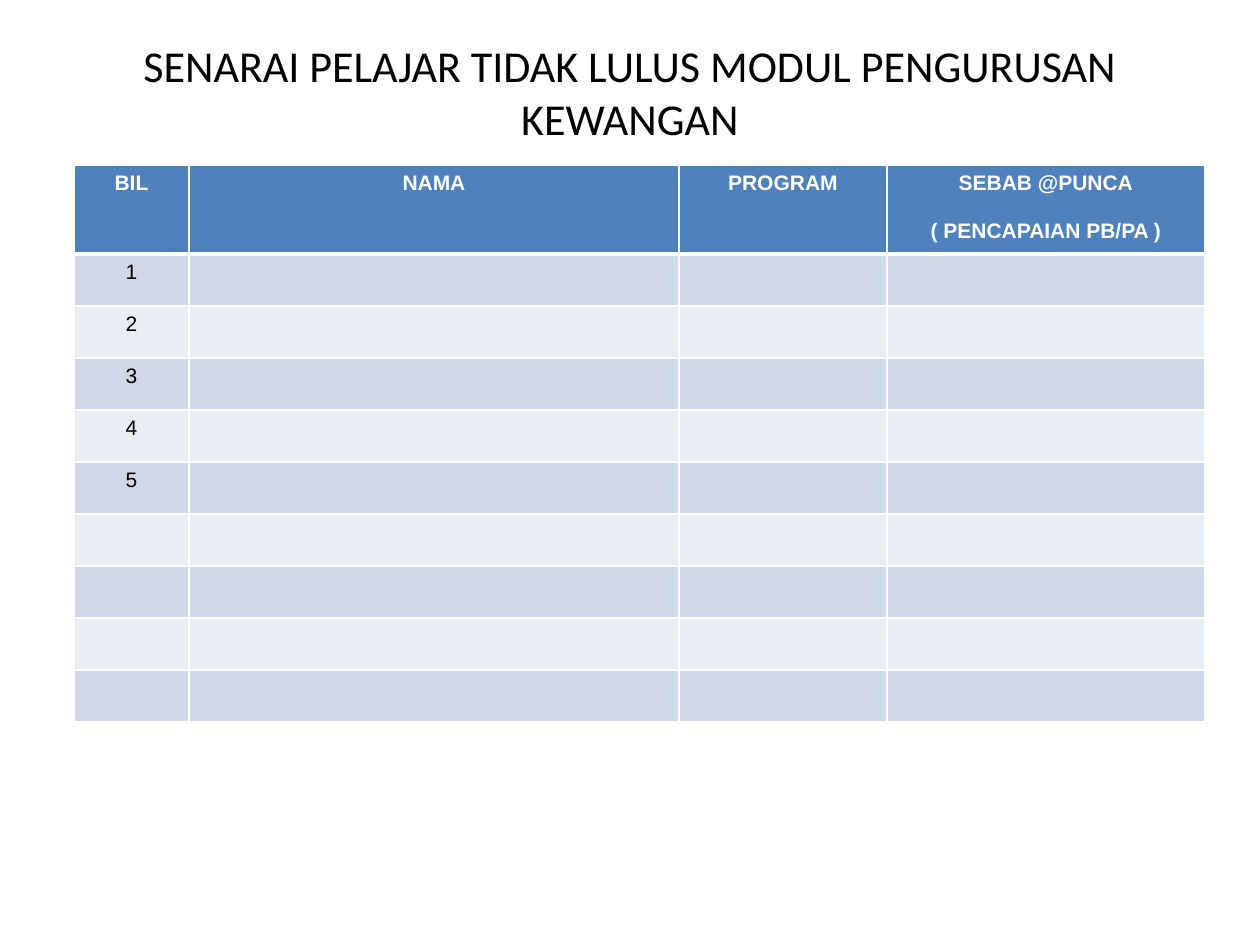
from lxml import etree
from pptx import Presentation
from pptx.dml.color import RGBColor
from pptx.enum.text import MSO_ANCHOR, PP_ALIGN
from pptx.oxml.ns import qn
from pptx.util import Pt

EMU_PER_PX = 914400 / 126
CENTER = PP_ALIGN.CENTER
MIDDLE = MSO_ANCHOR.MIDDLE
WHITE = RGBColor(0xFF, 0xFF, 0xFF)
BLACK = RGBColor(0x00, 0x00, 0x00)
HEADER_BLUE = RGBColor(0x4F, 0x81, 0xBD)
BAND_DARK = RGBColor(0xD0, 0xD8, 0xE8)
BAND_LIGHT = RGBColor(0xE9, 0xED, 0xF4)

TITLE = "SENARAI PELAJAR TIDAK LULUS MODUL PENGURUSAN KEWANGAN"
HEADERS = ["BIL", "NAMA", "PROGRAM", "SEBAB @PUNCA\n( PENCAPAIAN PB/PA )"]
COLUMN_WIDTHS = [115, 490, 208, 318]
HEADER_HEIGHT = 89
ROW_HEIGHT = 52
BODY_ROWS = 9
NUMBERED_ROWS = 5


def px(value):
    """Convert pixels to EMU."""
    return round(value * EMU_PER_PX)


def write_text(text_frame, text, font_name, size, color, bold=False):
    """Write centred text, one paragraph for each line."""
    text_frame.text = text
    for paragraph in text_frame.paragraphs:
        paragraph.alignment = CENTER
        for run in paragraph.runs:
            run.font.name = font_name
            run.font.size = Pt(size)
            run.font.bold = bold
            run.font.color.rgb = color


def add_title(slide):
    """Add the slide title."""
    box = slide.shapes.add_textbox(px(63), px(38), px(1134), px(107))
    text_frame = box.text_frame
    text_frame.word_wrap = True
    text_frame.vertical_anchor = MIDDLE
    write_text(text_frame, TITLE, "Calibri", 25.2, BLACK)


def style_cell(cell, fill_color, bottom_width=1):
    """Fill a cell and draw its white borders."""
    properties = cell._tc.get_or_add_tcPr()
    for side, width in (("L", 1), ("R", 1), ("T", 1), ("B", bottom_width)):
        line = etree.SubElement(properties, qn(f"a:ln{side}"), w=str(Pt(width)))
        solid_fill = etree.SubElement(line, qn("a:solidFill"))
        etree.SubElement(solid_fill, qn("a:srgbClr"), val=str(WHITE))
    cell.fill.solid()
    cell.fill.fore_color.rgb = fill_color


def add_student_table(slide):
    """Add the table of students with its numbered, banded rows."""
    height = HEADER_HEIGHT + BODY_ROWS * ROW_HEIGHT
    frame = slide.shapes.add_table(
        BODY_ROWS + 1, len(HEADERS), px(74), px(165), px(sum(COLUMN_WIDTHS)), px(height)
    )
    table = frame.table
    table.horz_banding = False
    for column, width in zip(table.columns, COLUMN_WIDTHS):
        column.width = px(width)
    for row in table.rows:
        row.height = px(ROW_HEIGHT)
    table.rows[0].height = px(HEADER_HEIGHT)

    for index, header in enumerate(HEADERS):
        cell = table.cell(0, index)
        style_cell(cell, HEADER_BLUE, bottom_width=3)
        write_text(cell.text_frame, header, "Arial", 12, WHITE, bold=True)
        for paragraph in cell.text_frame.paragraphs[1:]:
            paragraph.space_before = Pt(14)

    for number in range(1, BODY_ROWS + 1):
        for index in range(len(HEADERS)):
            style_cell(table.cell(number, index), BAND_DARK if number % 2 else BAND_LIGHT)
        if number <= NUMBERED_ROWS:
            write_text(table.cell(number, 0).text_frame, str(number), "Arial", 12, BLACK)


def main():
    """Build the slide and save it."""
    presentation = Presentation()
    presentation.slide_width = px(1260)
    presentation.slide_height = px(945)
    slide = presentation.slides.add_slide(presentation.slide_layouts[6])
    add_student_table(slide)
    add_title(slide)
    presentation.save("out.pptx")


if __name__ == "__main__":
    main()
